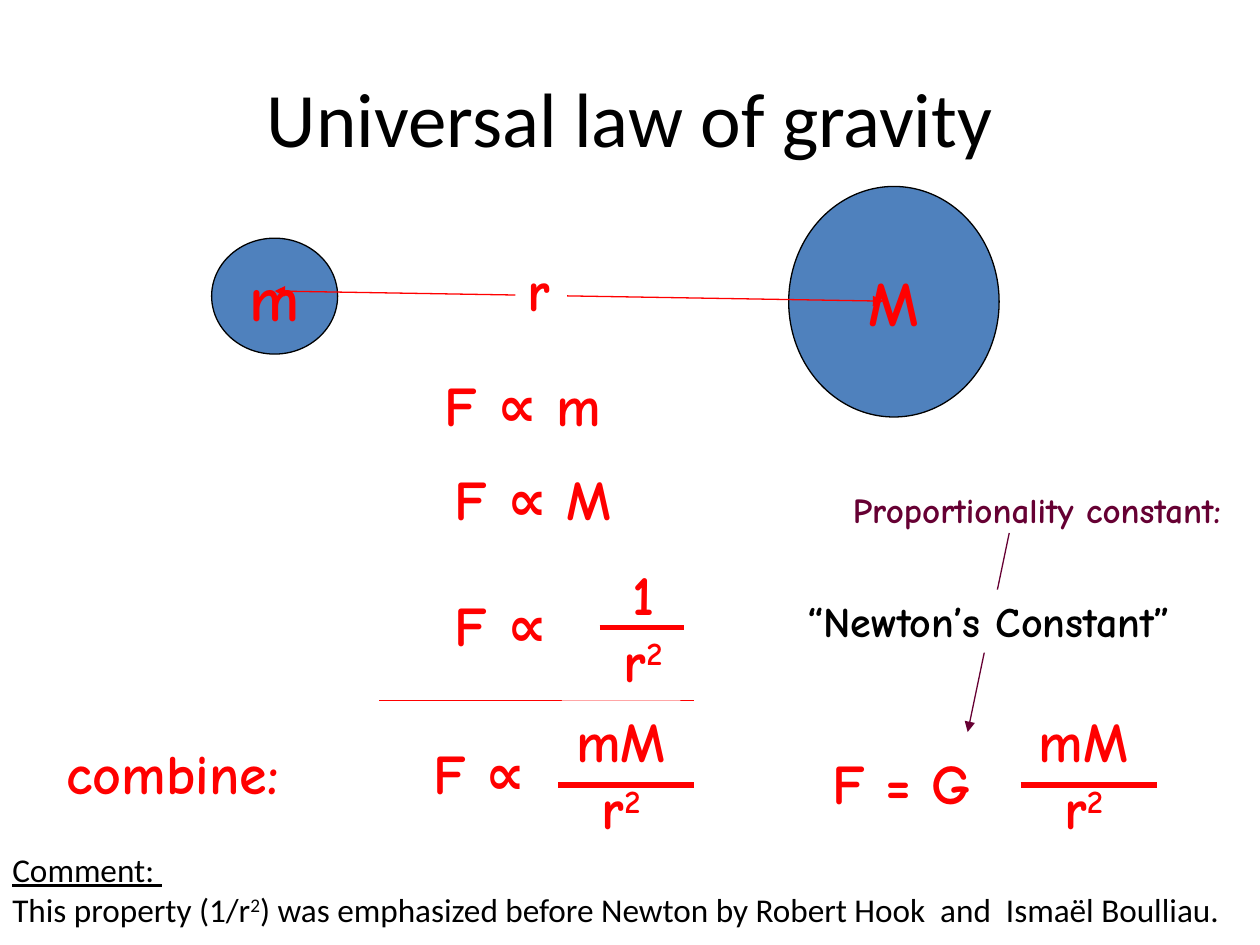
from lxml import etree
from pptx import Presentation
from pptx.dml.color import RGBColor
from pptx.enum.shapes import MSO_CONNECTOR, MSO_SHAPE
from pptx.enum.text import MSO_ANCHOR, MSO_AUTO_SIZE, PP_ALIGN
from pptx.oxml.ns import qn
from pptx.util import Pt

PX = 9144
LEFT, CENTER = PP_ALIGN.LEFT, PP_ALIGN.CENTER
TOP, MIDDLE = MSO_ANCHOR.TOP, MSO_ANCHOR.MIDDLE
FIT_SHAPE = MSO_AUTO_SIZE.SHAPE_TO_FIT_TEXT
STRAIGHT = MSO_CONNECTOR.STRAIGHT
RECTANGLE, OVAL = MSO_SHAPE.RECTANGLE, MSO_SHAPE.OVAL
TITLE_ONLY = 5
COMIC, SANS = "Comic Neue", "Calibri"
RED, PLUM, BLUE, WHITE, BLACK = "FF0000", "660033", "4F81BD", "FFFFFF", "000000"


def emu(*lengths):
    return [length * PX for length in lengths]


def color(value):
    return RGBColor.from_string(value)


def write(shape, *lines, size=32, font=COMIC, ink=RED, bold=True, align=LEFT,
          anchor=TOP, wrap=False, underlined=()):
    frame = shape.text_frame
    frame.word_wrap = wrap
    frame.vertical_anchor = anchor
    for index, line in enumerate(lines):
        paragraph = frame.add_paragraph() if index else frame.paragraphs[0]
        paragraph.alignment = align
        for part, words in enumerate(line.split("^")):
            run = paragraph.add_run()
            run.text = words
            run.font.size = Pt(size)
            run.font.name = font
            run.font.bold = bold
            run.font.underline = index in underlined
            run.font.color.rgb = color(ink)
            if part % 2:
                run.font._element.set("baseline", "30000")


def panel(slide, box, *lines, **style):
    shape = slide.shapes.add_shape(RECTANGLE, *emu(*box))
    shape.shadow.inherit = False
    shape.fill.solid()
    shape.fill.fore_color.rgb = color(WHITE)
    shape.line.fill.background()
    write(shape, *lines, **style)
    shape.text_frame.auto_size = FIT_SHAPE


def label(slide, box, *lines, **style):
    shape = slide.shapes.add_textbox(*emu(*box))
    write(shape, *lines, **style)
    shape.text_frame.auto_size = FIT_SHAPE


def rule(slide, start, end, ink=RED, width=0.75, arrows=()):
    line = slide.shapes.add_connector(STRAIGHT, *emu(*start, *end))
    line.line.color.rgb = color(ink)
    line.line.width = Pt(width)
    outline = line.line._get_or_add_ln()
    for arrow in arrows:
        etree.SubElement(outline, qn("a:" + arrow), type="triangle")
    etree.SubElement(line._element.spPr, qn("a:effectLst"))


def body(slide, box, mass):
    shape = slide.shapes.add_shape(OVAL, *emu(*box))
    shape.shadow.inherit = False
    shape.fill.solid()
    shape.fill.fore_color.rgb = color(BLUE)
    shape.line.color.rgb = color(BLACK)
    shape.line.width = Pt(0.75)
    write(shape, mass, size=36, align=CENTER, anchor=MIDDLE)


def fraction(slide, box, numerator, bar):
    left, top, width, height = box
    start, end, drop = bar
    panel(slide, box, numerator, "r^2", align=CENTER)
    rule(slide, (left + start, top + drop), (left + end, top + drop), width=3)


def title(slide, box):
    heading = slide.shapes.title
    heading.left, heading.top, heading.width, heading.height = emu(*box)
    write(heading, "Universal law of gravity", size=44, font=SANS, ink=BLACK,
          bold=False, align=CENTER, anchor=MIDDLE, wrap=True)


def two_bodies(slide, box):
    left, top, width, height = box
    body(slide, (left, top + 41, 100, 92), "m")
    body(slide, (left + width - 167, top, 167, height), "M")
    rule(slide, (left + 50, top + 83), (left + width - 92, top + 91),
         arrows=("headEnd", "tailEnd"))
    panel(slide, (left + 241, top + 50, 41, 63), "r")


def proportionalities(slide, box):
    left, top, width, height = box
    panel(slide, (left + 42, top, 152, 63), "F ∝ m")
    panel(slide, (left + 50, top + 75, 157, 63), "F ∝ M")
    panel(slide, (left + 50, top + 175, 98, 63), "F ∝")
    fraction(slide, (left + 180, top + 150, 59, 117), "1", (-5, 62, 59))
    rule(slide, (left, top + height), (left + width, top + height))


def combination(slide, box):
    left, top, width, height = box
    bar = (-3, 105, 67)
    panel(slide, (left, top + 25, 207, 63), "combine:")
    panel(slide, (left + 291, top + 25, 98, 63), "F ∝")
    fraction(slide, (left + 403, top, 94, height), "mM", bar)
    panel(slide, (left + 608, top + 33, 143, 63), "F = G")
    fraction(slide, (left + width - 94, top, 94, height), "mM", bar)


def constant(slide, box):
    left, top, width, height = box
    rule(slide, (left + 189, top + 40), (left + 156, top + height), ink=PLUM,
         arrows=("tailEnd",))
    label(slide, (left + width - 352, top, 352, 43), "Proportionality constant:",
          size=20, ink=PLUM, align=CENTER)
    panel(slide, (left, top + 85, 345, 50), "“Newton’s Constant”",
          size=24, ink=BLACK, align=CENTER)


def comment(slide, box):
    label(slide, box, "Comment: ",
          "This property (1/r^2^) was emphasized before Newton by "
          "Robert Hook  and  Ismaël Boulliau.",
          size=19, font=SANS, ink=BLACK, bold=False, wrap=True, underlined=(0,))


def main():
    deck = Presentation()
    deck.slide_width, deck.slide_height = emu(1000, 750)
    slide = deck.slides.add_slide(deck.slide_layouts[TITLE_ONLY])
    title(slide, (50, 30, 900, 125))
    two_bodies(slide, (168, 148, 625, 183))
    proportionalities(slide, (301, 289, 250, 267))
    combination(slide, (43, 556, 864, 117))
    constant(slide, (612, 383, 387, 198))
    comment(slide, (0, 669, 1000, 74))
    deck.save("out.pptx")


if __name__ == "__main__":
    main()
